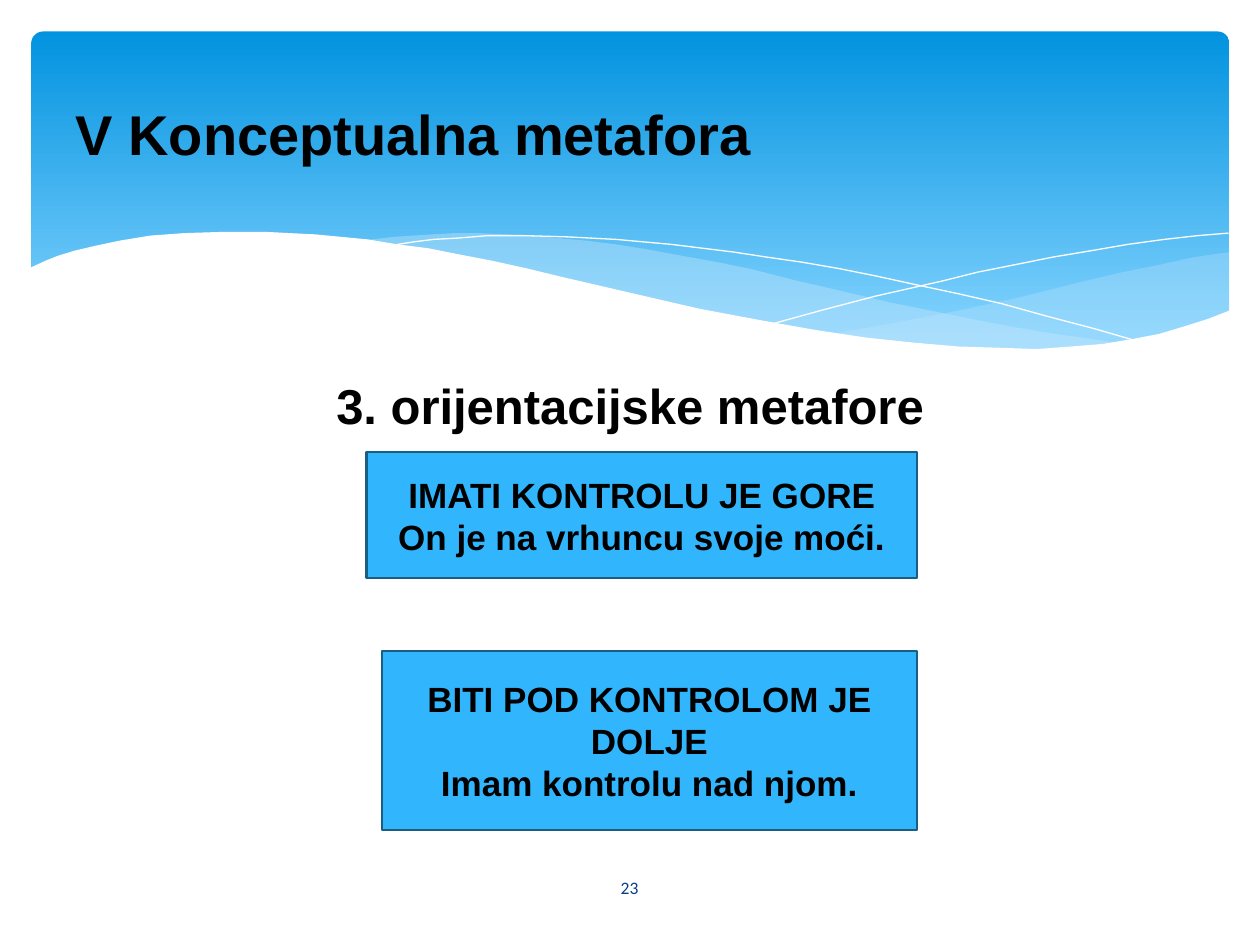
from lxml import etree
from pptx import Presentation
from pptx.dml.color import RGBColor
from pptx.enum import shapes, text
from pptx.oxml.ns import qn
from pptx.util import Pt

COLORS = {"black": "000000", "white": "FFFFFF", "top": "0293E0", "bottom": "83D3FE",
          "wave": "C6E7FC", "box": "31B6FD", "border": "195F84", "number": "073E87"}
UNIT = Pt(0.72)


def rgb(name):
    return RGBColor.from_string(COLORS[name])


def write(sp, lines, size, color="black", font="Arial", bold=True, align=text.PP_ALIGN.CENTER):
    tf = sp.text_frame
    tf.word_wrap = True
    tf.text = "\n".join(lines)
    for p in tf.paragraphs:
        p.alignment = align
        for r in p.runs:
            r.font.size, r.font.name, r.font.bold = Pt(size), font, bold
            r.font.color.rgb = rgb(color)
    return tf


prs = Presentation()
prs.slide_width, prs.slide_height = Pt(720), Pt(540)
s = prs.slides.add_slide(prs.slide_layouts[1])
title, body = s.placeholders

banner = s.shapes.add_shape(shapes.MSO_SHAPE.ROUNDED_RECTANGLE, Pt(18), Pt(18), Pt(684.5), Pt(194.5))
banner.adjustments[0] = 0.034
banner.shadow.inherit = False
banner.line.fill.background()
banner.fill.gradient()
banner.fill.gradient_angle = 270
for stop, name, position in zip(banner.fill.gradient_stops, ("top", "bottom"), (0, 0.9)):
    stop.color.rgb = rgb(name)
    stop.position = position

right_wave = [(976, 200), (948, 204), (921, 210), (891, 216), (861, 223), (805, 237), (753, 248),
              (706, 257), (661, 265), (691, 269), (719, 272), (745, 275), (769, 277), (803, 278),
              (835, 277), (863, 275), (889, 272), (913, 267), (935, 262), (949, 257), (963, 252),
              (976, 247)]
middle_wave = [(893, 273), (866, 269), (837, 265), (807, 260), (775, 254), (741, 247), (706, 240),
               (668, 231), (629, 222), (598, 214), (569, 208), (541, 203), (514, 198), (489, 194),
               (465, 191), (442, 189), (420, 187), (399, 186), (380, 185), (361, 185), (344, 186),
               (313, 188), (286, 191), (323, 196), (362, 203), (404, 211), (449, 222), (491, 232),
               (530, 240), (566, 248), (601, 255), (634, 261), (665, 266), (695, 270), (722, 274),
               (748, 276), (773, 277), (796, 278), (828, 278), (857, 277), (876, 275)]
falling_line = [(309, 195), (328, 192), (344, 190), (363, 189), (387, 187), (416, 187), (450, 188),
                (489, 190), (533, 194), (582, 200), (608, 204), (636, 208), (665, 213), (695, 219),
                (727, 226), (760, 233), (795, 241), (831, 251), (869, 261), (907, 272)]
rising_line = [(613, 257), (653, 246), (695, 235), (748, 223), (776, 216), (806, 210), (836, 204),
               (866, 199), (895, 194), (924, 190), (951, 187), (975, 185)]
white_wave = [(977, 246), (959, 253), (940, 259), (920, 265), (899, 269), (875, 273), (850, 275),
              (823, 277), (793, 276), (761, 275), (726, 272), (688, 268), (648, 262), (603, 254),
              (555, 245), (503, 233), (447, 220), (418, 213), (391, 207), (365, 202), (340, 197),
              (316, 194), (292, 190), (271, 188), (250, 186), (230, 185), (211, 184), (177, 184),
              (146, 185), (119, 187), (95, 191), (76, 195), (59, 199), (46, 203), (36, 207),
              (23, 213), (23, 329), (977, 329)]
for points, fill, alpha in [(right_wave, "wave", 29), (middle_wave, "wave", 40),
                            (falling_line, None, 0), (rising_line, None, 0),
                            (white_wave, "white", 100)]:
    builder = s.shapes.build_freeform(*points[0], scale=UNIT)
    builder.add_line_segments(points[1:], close=fill is not None)
    sp = builder.convert_to_shape()
    sp.shadow.inherit = False
    if fill is None:
        sp.fill.background()
        sp.line.color.rgb = rgb("white")
        sp.line.width = Pt(0)
        continue
    sp.line.fill.background()
    sp.fill.solid()
    sp.fill.fore_color.rgb = rgb(fill)
    if alpha < 100:
        color = sp.fill._xPr.find(qn("a:solidFill"))[0]
        etree.SubElement(color, qn("a:alpha")).set("val", str(alpha * 1000))

body.left, body.top, body.width, body.height = Pt(68.4), Pt(211), Pt(583.2), Pt(271.4)
tf = write(body, ["3. orijentacijske metafore"], 28)
pPr = tf.paragraphs[0]._p.get_or_add_pPr()
pPr.set("marL", "0")
pPr.set("indent", "0")
etree.SubElement(pPr, qn("a:buNone"))

title.left, title.top, title.width, title.height = Pt(36), Pt(26.6), Pt(648), Pt(98.6)
tf = write(title, ["V Konceptualna metafora"], 32, align=text.PP_ALIGN.LEFT)
tf.vertical_anchor = text.MSO_ANCHOR.MIDDLE
for sp in (body, title):
    s.shapes._spTree.append(sp._element)

number = s.shapes.add_textbox(Pt(314), Pt(492.5), Pt(91.5), Pt(28.8))
tf = write(number, ["23"], 10, "number", "Calibri", False)
tf.vertical_anchor = text.MSO_ANCHOR.MIDDLE

for left, top, width, height, lines in [
    (209.5, 258.5, 314.6, 72, ["IMATI KONTROLU JE GORE", "On je na vrhuncu svoje moći."]),
    (218.1, 372.2, 306, 102.2, ["BITI POD KONTROLOM JE DOLJE", "Imam kontrolu nad njom."]),
]:
    sp = s.shapes.add_shape(shapes.MSO_SHAPE.RECTANGLE, Pt(left), Pt(top), Pt(width), Pt(height))
    sp.shadow.inherit = False
    sp.fill.solid()
    sp.fill.fore_color.rgb = rgb("box")
    sp.line.color.rgb = rgb("border")
    sp.line.width = Pt(1.25)
    tf = write(sp, lines, 20)
    tf.vertical_anchor = text.MSO_ANCHOR.MIDDLE

prs.save("out.pptx")
